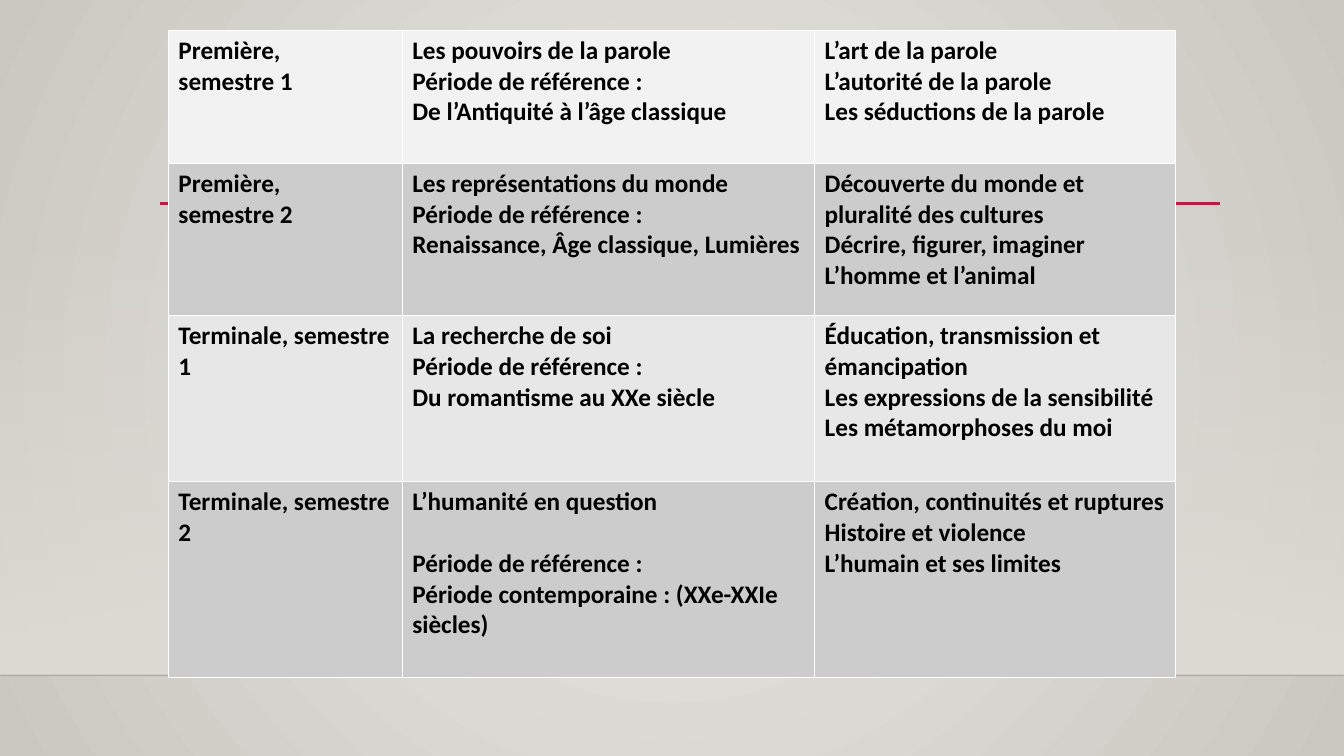
import pptx
import pptx.util
import pptx.oxml
import pptx.oxml.ns
import pptx.dml.color
import pptx.enum.shapes

rows = [
    (["Première,", "semestre 1"],
     ["Les pouvoirs de la parole", "Période de référence :", "De l’Antiquité à l’âge classique"],
     ["L’art de la parole", "L’autorité de la parole", "Les séductions de la parole"]),
    (["Première,", "semestre 2"],
     ["Les représentations du monde", "Période de référence :", "Renaissance, Âge classique, Lumières"],
     ["Découverte du monde et pluralité des cultures", "Décrire, figurer, imaginer", "L’homme et l’animal"]),
    (["Terminale, semestre 1"],
     ["La recherche de soi", "Période de référence :", "Du romantisme au XXe siècle"],
     ["Éducation, transmission et émancipation", "Les expressions de la sensibilité", "Les métamorphoses du moi"]),
    (["Terminale, semestre 2"],
     ["L’humanité en question", "Période de référence :", "Période contemporaine : (XXe-XXIe siècles)"],
     ["Création, continuités et ruptures", "Histoire et violence", "L’humain et ses limites"]),
]
widths = [2.32, 4.09, 3.58]
heights = [1.32, 1.51, 1.65, 1.94]
gaps = {(3, 1, 1): 22}
theme = {
    "font": "Calibri", "size": 18, "ink": "000000", "border": "FFFFFF",
    "bands": ["F2F2F2", "CCCCCC", "E7E7E7", "CCCCCC"],
    "back": ["ECEAE7", "CAC7C1"], "wall": "DFDBD5",
    "edge": "000001", "accent": "B71E42",
}
wide, high, floor = 13.33, 7.5, 6.7

inch = pptx.util.Inches
point = pptx.util.Pt
color = pptx.dml.color.RGBColor.from_string
qn = pptx.oxml.ns.qn
space = pptx.oxml.ns.nsdecls("a")


def node(text):
    return pptx.oxml.parse_xml(text)


def fade(tag, part):
    tag.append(node(f'<a:alpha {space} val="{part * 1000}"/>'))


def blend(fill, tones):
    fill.gradient()
    for stop, tone in zip(fill.gradient_stops, tones):
        stop.color.rgb = color(tone)


def rule(slide, left, right, top, tone, size):
    line = slide.shapes.add_connector(
        pptx.enum.shapes.MSO_CONNECTOR.STRAIGHT, inch(left), inch(top), inch(right), inch(top))
    line.line.color.rgb = color(tone)
    line.line.width = point(size)
    line.element.spPr.append(node(f"<a:effectLst {space}/>"))
    return line


def paint(slide):
    blend(slide.background.fill, theme["back"])
    grade = slide.element.find(".//" + qn("a:gradFill"))
    grade.replace(grade.find(qn("a:lin")), node(
        f'<a:path {space} path="circle">'
        '<a:fillToRect l="50000" t="50000" r="50000" b="50000"/></a:path>'))
    wall = slide.shapes.add_shape(
        pptx.enum.shapes.MSO_SHAPE.RECTANGLE, 0, inch(2.21), inch(wide), inch(floor - 2.21))
    wall.shadow.inherit = False
    wall.line.fill.background()
    blend(wall.fill, [theme["wall"]] * 2)
    wall.fill.gradient_angle = 270
    fade(wall.element.find(".//" + qn("a:srgbClr")), 0)
    edge = rule(slide, 0, wide, floor, theme["edge"], 1)
    fade(edge.element.find(".//" + qn("a:srgbClr")), 20)
    rule(slide, 1.59, 12.1, 2.02, theme["accent"], 2.5)


def border(cell):
    props = cell._tc.get_or_add_tcPr()
    for spot, side in enumerate("LRTB"):
        props.insert(spot, node(
            f'<a:ln{side} {space} w="12700"><a:solidFill>'
            f'<a:srgbClr val="{theme["border"]}"/></a:solidFill></a:ln{side}>'))


def write(cell, lines, row, col):
    frame = cell.text_frame
    frame.text = "\n".join(lines)
    for spot, para in enumerate(frame.paragraphs):
        para.font.name = theme["font"]
        para.font.size = point(theme["size"])
        para.font.bold = True
        para.font.color.rgb = color(theme["ink"])
        if (row, col, spot) in gaps:
            para.space_before = point(gaps[row, col, spot])


def chart(slide):
    table = slide.shapes.add_table(
        len(rows), len(widths), inch(1.67), inch(0.3),
        inch(sum(widths)), inch(sum(heights))).table
    table.first_row = table.horz_banding = False
    for col, width in zip(table.columns, widths):
        col.width = inch(width)
    for row, height in zip(table.rows, heights):
        row.height = inch(height)
    for r, row in enumerate(rows):
        for c, lines in enumerate(row):
            cell = table.cell(r, c)
            cell.fill.solid()
            cell.fill.fore_color.rgb = color(theme["bands"][r])
            border(cell)
            write(cell, lines, r, c)


def main():
    deck = pptx.Presentation()
    deck.slide_width, deck.slide_height = inch(wide), inch(high)
    slide = deck.slides.add_slide(deck.slide_layouts[6])
    paint(slide)
    chart(slide)
    deck.save("out.pptx")


if __name__ == "__main__":
    main()
